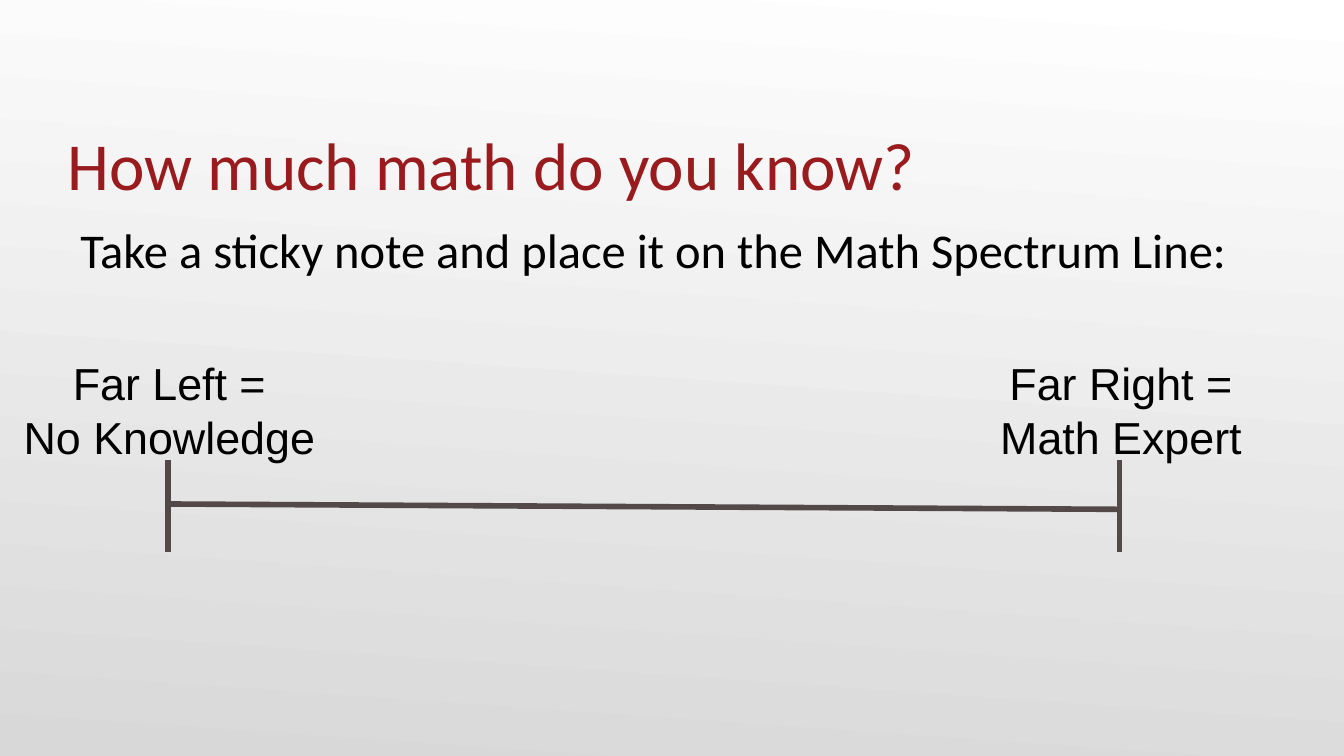
from dataclasses import dataclass

from lxml import etree
from pptx import Presentation
from pptx.dml.color import RGBColor
from pptx.enum.shapes import MSO_CONNECTOR
from pptx.enum.text import MSO_ANCHOR, MSO_AUTO_SIZE, PP_ALIGN
from pptx.oxml.ns import qn
from pptx.util import Inches, Pt

STRAIGHT = MSO_CONNECTOR.STRAIGHT
TOP, BOTTOM = MSO_ANCHOR.TOP, MSO_ANCHOR.BOTTOM
LEFT, CENTER = PP_ALIGN.LEFT, PP_ALIGN.CENTER
FIXED, GROW = MSO_AUTO_SIZE.NONE, MSO_AUTO_SIZE.SHAPE_TO_FIT_TEXT

COLORS = {
    "bg_top": "FFFFFF",
    "bg_bottom": "D8D8D8",
    "title": "991B1E",
    "text": "000000",
    "line": "534949",
}
LEFT_END, RIGHT_END = 1.25, 8.33
TICK_TOP, TICK_BOTTOM = 3.42, 4.11


@dataclass
class TextItem:
    lines: list[str]
    left: float
    top: float
    width: float
    height: float
    size: float
    font: str
    color: str = "text"
    align: PP_ALIGN = LEFT
    anchor: MSO_ANCHOR = TOP
    side_inset: float = 0.1
    bottom_inset: float = 0.05
    wrap: bool = True
    auto_size: MSO_AUTO_SIZE = FIXED


@dataclass
class Line:
    x1: float
    y1: float
    x2: float
    y2: float


def rgb(name: str) -> RGBColor:
    return RGBColor.from_string(COLORS[name])


def add_text(s, item: TextItem) -> None:
    box = s.shapes.add_textbox(Inches(item.left), Inches(item.top),
                               Inches(item.width), Inches(item.height))
    tf = box.text_frame
    tf.word_wrap = item.wrap
    tf.auto_size = item.auto_size
    tf.vertical_anchor = item.anchor
    tf.margin_left = tf.margin_right = Inches(item.side_inset)
    tf.margin_top = Inches(0.05)
    tf.margin_bottom = Inches(item.bottom_inset)
    tf.text = "\n".join(item.lines)
    for p in tf.paragraphs:
        p.alignment = item.align
        for r in p.runs:
            r.font.size = Pt(item.size)
            r.font.name = item.font
            r.font.color.rgb = rgb(item.color)


def add_line(s, line: Line) -> None:
    c = s.shapes.add_connector(STRAIGHT, Inches(line.x1), Inches(line.y1),
                               Inches(line.x2), Inches(line.y2))
    c.line.color.rgb = rgb("line")
    c.line.width = Pt(3)
    etree.SubElement(c._element.spPr, qn("a:effectLst"))


def end_label(lines: list[str], left: float, width: float) -> TextItem:
    return TextItem(lines, left, 2.6, width, 0.91, 24, "Arial",
                    align=CENTER, wrap=False, auto_size=GROW)


def main() -> None:
    prs = Presentation()
    prs.slide_width = Inches(10)
    prs.slide_height = prs.slide_width * 9 // 16
    s = prs.slides.add_slide(prs.slide_layouts[6])

    # Background gradient
    fill = s.background.fill
    fill.gradient()
    fill.gradient_angle = 360 - 94
    for stop, position, color in zip(fill.gradient_stops, (0, 1),
                                     ("bg_top", "bg_bottom")):
        stop.position = position
        stop.color.rgb = rgb(color)

    # Title and instruction
    add_text(s, TextItem(["How much math do you know?"], 0.5, 0.58, 9, 0.94,
                         36, "Calibri", "title", anchor=BOTTOM,
                         side_inset=0, bottom_inset=0))
    add_text(s, TextItem(
        ["Take a sticky note and place it on the Math Spectrum Line:"],
        0.5, 1.59, 9, 0.69, 26, "Calibri"))

    # Spectrum line with a tick at each end
    add_line(s, Line(LEFT_END, 3.75, RIGHT_END, 3.79))
    for x in (LEFT_END, RIGHT_END):
        add_line(s, Line(x, TICK_TOP, x, TICK_BOTTOM))

    # End labels
    add_text(s, end_label(["Far Right =", "Math Expert"], 7.33, 2.02))
    add_text(s, end_label(["Far Left =", "No Knowledge"], 0.06, 2.4))

    prs.save("out.pptx")


if __name__ == "__main__":
    main()
